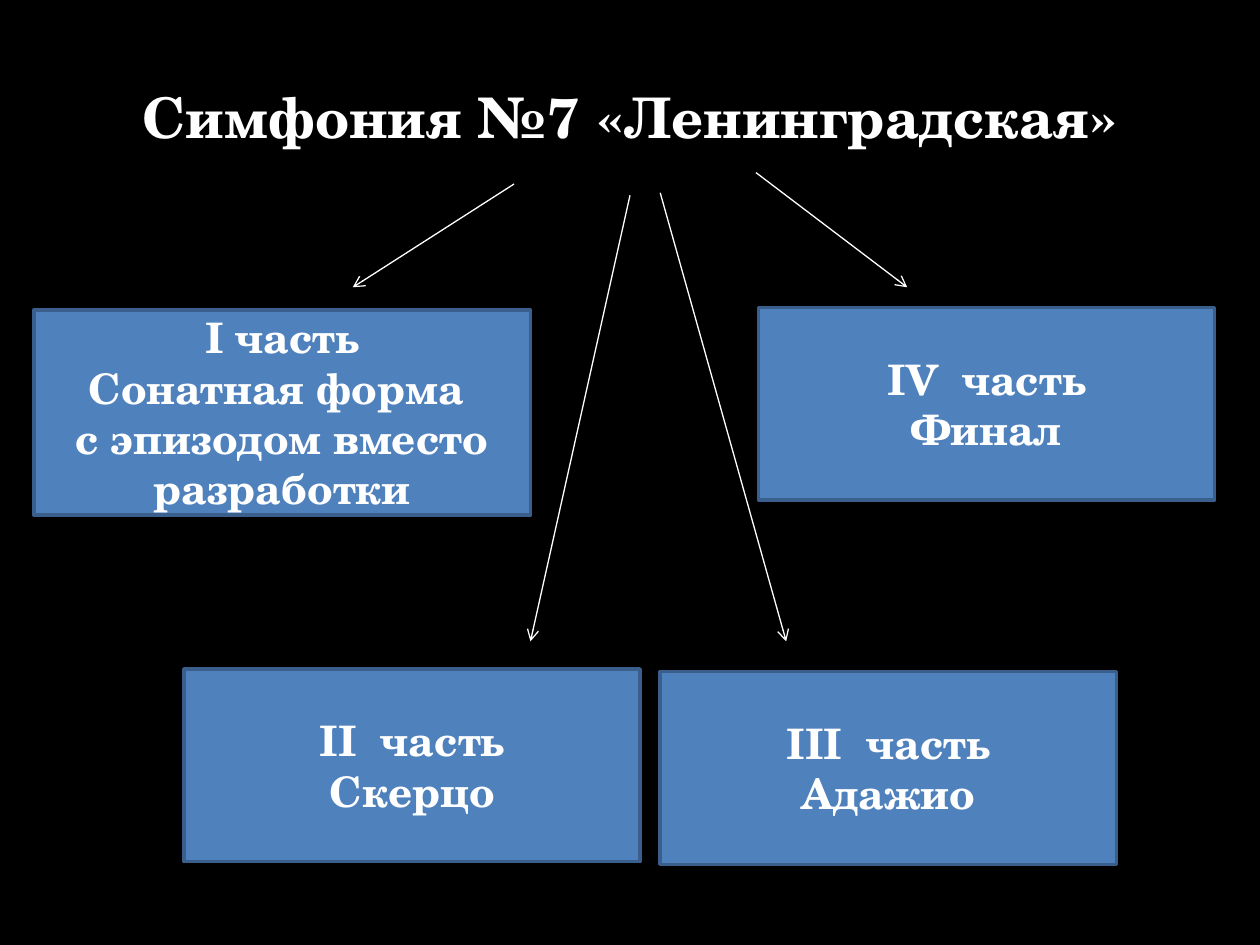
from lxml.etree import SubElement
from pptx import Presentation
from pptx.dml.color import RGBColor
from pptx.enum.shapes import MSO_CONNECTOR, MSO_SHAPE
from pptx.enum.text import MSO_ANCHOR, PP_ALIGN
from pptx.oxml.ns import qn
from pptx.util import Inches, Pt

WIDTH, HEIGHT = Inches(10), Inches(7.5)
BLACK, WHITE, BLUE, NAVY = "000000", "FFFFFF", "4F81BD", "3A5F8C"
FONT = {"name": "TeX Gyre Schola", "bold": True}
FRAME = {"word_wrap": True, "vertical_anchor": MSO_ANCHOR.MIDDLE}
PART_SIZE = (36.2, 20.4)

MOVEMENTS = [
    ((2.7, 32.8), (39.4, 21.73),
     ["I часть", "Сонатная форма ", "с эпизодом вместо разработки"]),
    ((14.6, 70.8), PART_SIZE, ["II  часть", "Скерцо"]),
    ((52.4, 71.07), PART_SIZE, ["III  часть", "Адажио"]),
    ((60.2, 32.53), PART_SIZE, ["IV  часть", "Финал"]),
]
ARROWS = [
    ((60, 18.27), (72, 30.4)),
    ((50, 20.67), (42.1, 67.87)),
    ((52.4, 20.4), (62.4, 67.87)),
    ((40.8, 19.47), (28, 30.4)),
]


def percent(point):
    across, down = point
    return round(WIDTH * across / 100), round(HEIGHT * down / 100)


def paint(color_format, color):
    color_format.rgb = RGBColor.from_string(color)


def apply(target, values):
    for name, value in values.items():
        setattr(target, name, value)


def write_lines(box, lines, size):
    frame = box.text_frame
    apply(frame, FRAME)
    for index, line in enumerate(lines):
        para = frame.add_paragraph() if index else frame.paragraphs[0]
        para.alignment = PP_ALIGN.CENTER
        span = para.add_run()
        span.text = line
        apply(span.font, {**FONT, "size": Pt(size)})
        paint(span.font.color, WHITE)


def add_title(page, text):
    box = page.shapes.add_textbox(*percent((5, 4)), *percent((90, 16.67)))
    write_lines(box, [text], 32)


def add_movement(page, corner, extent, lines):
    box = page.shapes.add_shape(
        MSO_SHAPE.RECTANGLE, *percent(corner), *percent(extent))
    box.shadow.inherit = False
    box.fill.solid()
    paint(box.fill.fore_color, BLUE)
    paint(box.line.color, NAVY)
    box.line.width = Pt(2)
    write_lines(box, lines, 24)


def add_arrow(page, start, end):
    arrow = page.shapes.add_connector(
        MSO_CONNECTOR.STRAIGHT, *percent(start), *percent(end))
    paint(arrow.line.color, WHITE)
    arrow.line.width = Pt(0.75)
    properties = arrow.element.spPr
    SubElement(properties.find(qn("a:ln")), qn("a:tailEnd"), type="arrow")
    SubElement(properties, qn("a:effectLst"))


def main():
    deck = Presentation()
    apply(deck, {"slide_width": WIDTH, "slide_height": HEIGHT})
    page = deck.slides.add_slide(deck.slide_layouts[6])
    page.background.fill.solid()
    paint(page.background.fill.fore_color, BLACK)
    add_title(page, "Симфония №7 «Ленинградская»")
    for movement in MOVEMENTS:
        add_movement(page, *movement)
    for start, end in ARROWS:
        add_arrow(page, start, end)
    deck.save("out.pptx")


if __name__ == "__main__":
    main()
